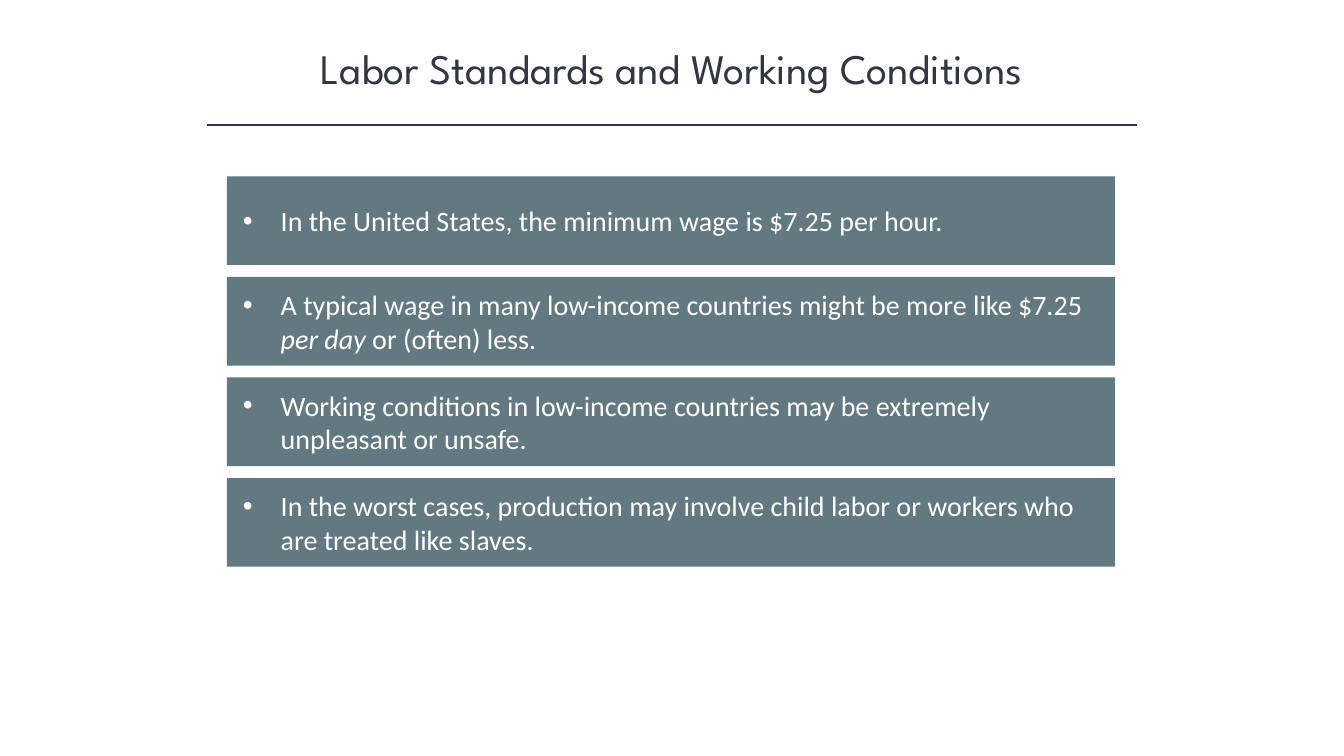
from dataclasses import dataclass

from lxml.etree import SubElement
from pptx import Presentation
from pptx.dml.color import RGBColor
from pptx.enum.shapes import MSO_CONNECTOR, MSO_SHAPE
from pptx.enum.text import MSO_ANCHOR, MSO_AUTO_SIZE, PP_ALIGN
from pptx.oxml.ns import qn
from pptx.util import Pt


@dataclass(frozen=True)
class Theme:
    ink: RGBColor = RGBColor(0x32, 0x35, 0x42)
    bar: RGBColor = RGBColor(0x62, 0x79, 0x81)
    white: RGBColor = RGBColor(0xFF, 0xFF, 0xFF)
    title_font: str = "League Spartan"
    body_font: str = "Calibri"
    title_size: int = 30
    body_size: int = 20


THEME = Theme()

# Each statement is a list of (text, italic) runs.
STATEMENTS = [
    [("In the United States, the minimum wage is $7.25 per hour.", False)],
    [
        ("A typical wage in many low-income countries might be more like $7.25 ", False),
        ("per day ", True),
        ("or (often) less.", False),
    ],
    [("Working conditions in low-income countries may be extremely "
      "unpleasant or unsafe.", False)],
    [("In the worst cases, production may involve child labor or workers who "
      "are treated like slaves.", False)],
]


def add_run(paragraph, text, font_name, size, color, italic=False):
    run = paragraph.add_run()
    run.text = text
    run.font.name = font_name
    run.font.size = Pt(size)
    run.font.color.rgb = color
    run.font.italic = italic


def add_bullet(paragraph, indent):
    """Give the paragraph a round bullet with a hanging indent in points."""
    properties = paragraph._p.get_or_add_pPr()
    properties.set("marL", str(Pt(indent)))
    properties.set("indent", str(-Pt(indent)))
    SubElement(properties, qn("a:buFont"), typeface="Arial")
    SubElement(properties, qn("a:buChar"), char="•")


def add_heading(slide, text, left, top, width, height):
    """Place the title in the box and a thin rule below it."""
    title = slide.shapes.title
    title.left, title.top, title.width, title.height = map(Pt, (left, top, width, height))
    frame = title.text_frame
    frame.word_wrap = True
    frame.auto_size = MSO_AUTO_SIZE.NONE
    frame.vertical_anchor = MSO_ANCHOR.TOP
    paragraph = frame.paragraphs[0]
    paragraph.alignment = PP_ALIGN.CENTER
    add_run(paragraph, text, THEME.title_font, THEME.title_size, THEME.ink)

    rule_inset = 28
    rule_y = Pt(top + height + 18.7)
    rule = slide.shapes.add_connector(
        MSO_CONNECTOR.STRAIGHT,
        Pt(left + rule_inset), rule_y, Pt(left + width - rule_inset), rule_y,
    )
    rule.line.color.rgb = THEME.ink
    rule.line.width = Pt(1)
    SubElement(rule._element.spPr, qn("a:effectLst"))


def add_bar(slide, runs, left, top, width, height):
    bar = slide.shapes.add_shape(
        MSO_SHAPE.RECTANGLE, Pt(left), Pt(top), Pt(width), Pt(height)
    )
    bar.shadow.inherit = False
    bar.fill.solid()
    bar.fill.fore_color.rgb = THEME.bar
    bar.line.fill.background()

    frame = bar.text_frame
    frame.word_wrap = True
    frame.vertical_anchor = MSO_ANCHOR.MIDDLE
    frame.margin_left, frame.margin_right = Pt(11.5), Pt(22)
    paragraph = frame.paragraphs[0]
    paragraph.alignment = PP_ALIGN.LEFT
    add_bullet(paragraph, 27)
    for text, italic in runs:
        add_run(paragraph, text, THEME.body_font, THEME.body_size, THEME.white, italic)


def add_bar_stack(slide, statements, left, top, width, height, gap):
    """Fill the box with equal bars, one for each statement."""
    bar_height = (height - gap * (len(statements) - 1)) / len(statements)
    for index, runs in enumerate(statements):
        add_bar(slide, runs, left, top + index * (bar_height + gap), width, bar_height)


def main():
    presentation = Presentation()
    presentation.slide_width, presentation.slide_height = Pt(960), Pt(540)
    slide = presentation.slides.add_slide(presentation.slide_layouts.get_by_name("Title Only"))
    add_heading(slide, "Labor Standards and Working Conditions", 120, 26.6, 720, 44)
    add_bar_stack(slide, STATEMENTS, 162, 126, 634.3, 278.8, gap=8.5)
    presentation.save("out.pptx")


if __name__ == "__main__":
    main()
